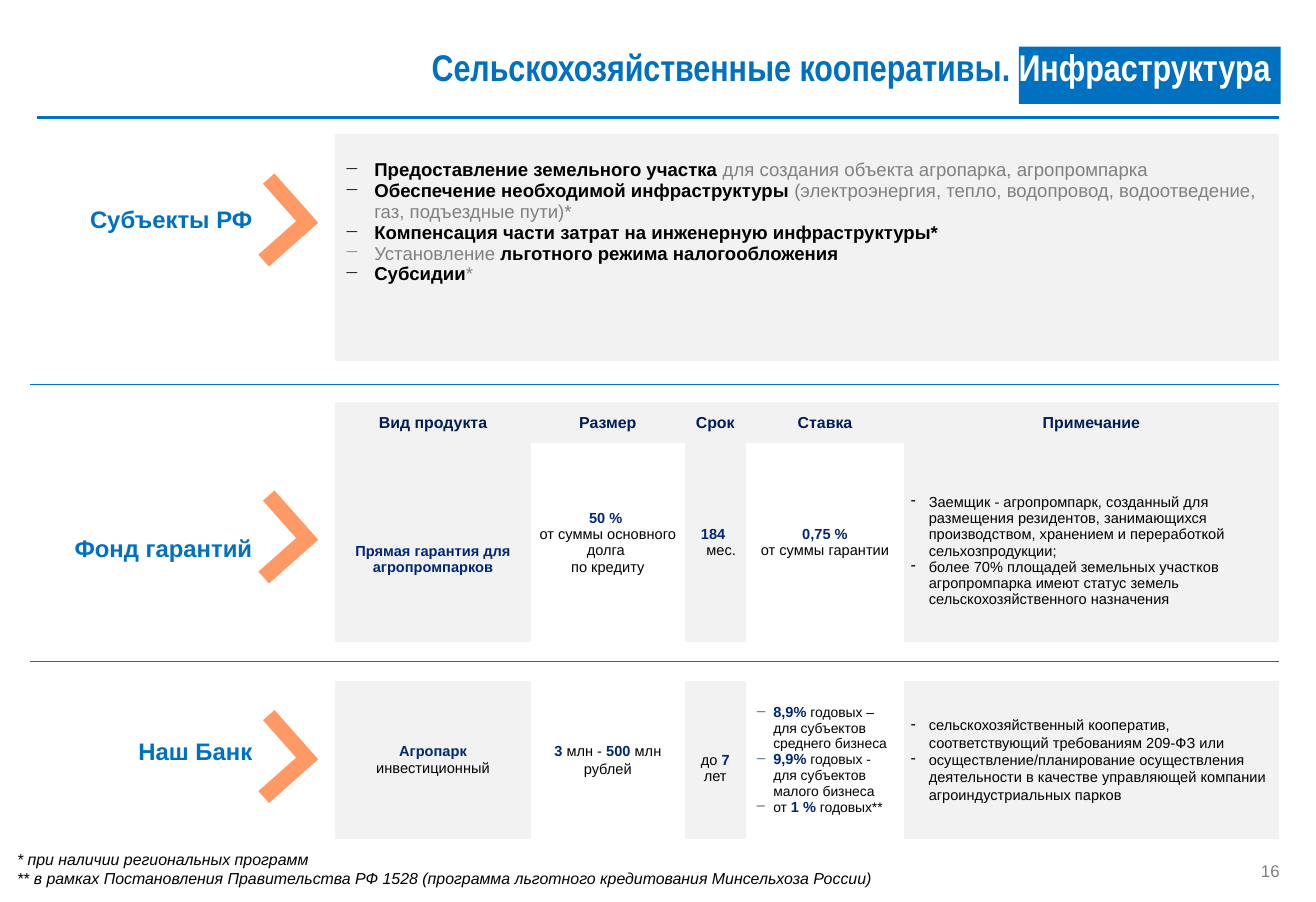
from lxml import etree
from pptx import Presentation
from pptx.dml.color import RGBColor
from pptx.enum.shapes import MSO_CONNECTOR, MSO_SHAPE
from pptx.enum.text import MSO_ANCHOR, MSO_AUTO_SIZE, PP_ALIGN
from pptx.oxml.ns import qn
from pptx.util import Pt

BLUE = RGBColor(0x00, 0x70, 0xC0)
NAVY = RGBColor(0x00, 0x27, 0x76)
HEADER_NAVY = RGBColor(0x00, 0x1D, 0x58)
ORANGE = RGBColor(0xFF, 0x99, 0x66)
PALE = RGBColor(0xF2, 0xF2, 0xF2)
GRAY = RGBColor(0x80, 0x80, 0x80)
BLACK = RGBColor(0, 0, 0)
WHITE = RGBColor(255, 255, 255)

PLAIN_TABLE_STYLE = "{2D5ABB26-0587-4C30-8999-92F81FD0307C}"
KEY = dict(color=NAVY, bold=True)
STRONG = dict(bold=True)
MUTED = dict(color=GRAY)
RATE = dict(color=NAVY, bold=True, size=11)

COLUMN_WIDTHS = (147.6, 115.9, 46.1, 119.5, 282.2)
ROW_HEIGHTS = (171.4, 31, 31, 150.5, 28.8, 119.5)
HEADERS = ("Вид продукта", "Размер", "Срок", "Ставка", "Примечание")
REGION_MEASURES = [
    [("Предоставление земельного участка ", STRONG),
     ("для создания объекта агропарка, агропромпарка", MUTED)],
    [("Обеспечение необходимой инфраструктуры ", STRONG),
     ("(электроэнергия, тепло, водопровод, водоотведение, газ, подъездные пути)*", MUTED)],
    [("Компенсация части затрат на инженерную инфраструктуры*", STRONG)],
    [("Установление ", MUTED), ("льготного режима налогообложения", STRONG)],
    [("Субсидии", STRONG), ("*", MUTED)],
]
NOTE = dict(align=PP_ALIGN.LEFT, bullet="-", indent=13.5)
TIGHT = dict(side=5, top=0, bottom=0)
# Each cell: paragraphs, text format, cell margins
GUARANTEE = (
    ([[("Прямая гарантия для агропромпарков", KEY)]], {}, dict(top=28.9)),
    ([[("50 % ", KEY)], ["от суммы основного долга "], ["по кредиту"]], {}, TIGHT),
    ([[("184 ", KEY)], ["мес."]], dict(last_left=9), {}),
    ([[("0,75 %", KEY)], ["от суммы гарантии"]], {}, {}),
    ([["Заемщик - агропромпарк, созданный для размещения резидентов, занимающихся "
       "производством, хранением и переработкой сельхозпродукции;"],
      ["более 70% площадей земельных участков агропромпарка имеют статус земель "
       "сельскохозяйственного назначения"]], NOTE, dict(side=5, top=12.65, bottom=0)),
)
LOAN = (
    ([[("Агропарк", KEY)], ["инвестиционный"]], {}, {}),
    ([[("3 ", KEY), "млн - ", ("500 ", KEY), "млн рублей"]], dict(spacing=1.07), TIGHT),
    ([["до", (" 7 ", KEY), "лет"]], {}, dict(top=16.25)),
    ([[("8,9%", RATE), " годовых – для субъектов среднего бизнеса"],
      [("9,9%", RATE), " годовых - для субъектов малого бизнеса"],
      ["от ", ("1 %", RATE), " годовых**"]], dict(NOTE, bullet="−", size=10.5), {}),
    ([["сельскохозяйственный кооператив, соответствующий требованиям 209-ФЗ или"],
      ["осуществление/планирование осуществления деятельности в качестве "
       "управляющей компании агроиндустриальных парков"]], dict(NOTE, spacing=1.07), TIGHT),
)


def write_text(frame, paragraphs, size=11, color=BLACK, bold=False, italic=False,
               font="Arial", align=PP_ALIGN.LEFT, spacing=None, bullet=None,
               indent=0, last_left=0):
    """Fill a frame; a span is a string or a (string, format overrides) pair."""
    for index, spans in enumerate(paragraphs):
        para = frame.paragraphs[0] if index == 0 else frame.add_paragraph()
        properties = para._p.get_or_add_pPr()
        if bullet:
            properties.set("marL", str(Pt(indent)))
            properties.set("indent", str(-Pt(indent)))
            etree.SubElement(properties, qn("a:buChar")).set("char", bullet)
        elif last_left and index == len(paragraphs) - 1:
            properties.set("marL", str(Pt(last_left)))
        para.alignment = align
        if spacing:
            para.line_spacing = spacing
        for span in spans:
            text, changes = (span, {}) if isinstance(span, str) else span
            run = para.add_run()
            run.text = text
            run.font.name = font
            run.font.size = Pt(changes.get("size", size))
            run.font.bold = changes.get("bold", bold)
            run.font.italic = italic
            run.font.color.rgb = changes.get("color", color)


def add_text_box(slide, box, paragraphs, anchor=MSO_ANCHOR.TOP, inset=None, **text_format):
    frame = slide.shapes.add_textbox(*map(Pt, box)).text_frame
    frame.word_wrap = True
    frame.vertical_anchor = anchor
    if inset is not None:
        frame.margin_left = frame.margin_right = Pt(inset)
        frame.margin_top = frame.margin_bottom = Pt(inset)
    write_text(frame, paragraphs, **text_format)


def add_filled_shape(slide, kind, box, color):
    shape = slide.shapes.add_shape(kind, *map(Pt, box))
    shape.shadow.inherit = False
    shape.fill.solid()
    shape.fill.fore_color.rgb = color
    shape.line.fill.background()
    return shape


def add_rule(slide, left, top, width, weight):
    rule = slide.shapes.add_connector(
        MSO_CONNECTOR.STRAIGHT, Pt(left), Pt(top), Pt(left + width), Pt(top))
    rule.line.color.rgb = BLUE
    rule.line.width = Pt(weight)
    etree.SubElement(rule._element.spPr, qn("a:effectLst"))


def add_heading(slide, left, top, width, height):
    title = slide.shapes.title
    title.left, title.top, title.width, title.height = map(Pt, (left, top, width, height))
    frame = title.text_frame
    frame.auto_size = MSO_AUTO_SIZE.NONE
    frame.word_wrap = True
    frame.vertical_anchor = MSO_ANCHOR.MIDDLE
    write_text(frame, [["Сельскохозяйственные кооперативы. ",
                        ("Инфраструктура", dict(color=WHITE))]],
               size=28, color=BLUE, bold=True, font="Arial Narrow")
    highlight = add_filled_shape(slide, MSO_SHAPE.RECTANGLE,
                                 (left + 450, top + 12.2, 197.3, 43.2), BLUE)
    title._element.addprevious(highlight._element)
    add_rule(slide, 28.1, top + 65.6, 936, 2.25)


def add_provider(slide, name, box, chevron_top):
    """Place a provider's name and the chevron that points to its measures."""
    left, top, width, height = box
    add_text_box(slide, box, [[name]], anchor=MSO_ANCHOR.MIDDLE, size=18,
                 color=BLUE, bold=True, align=PP_ALIGN.RIGHT)
    chevron = add_filled_shape(slide, MSO_SHAPE.CORNER,
                               (left + width - 17.3, chevron_top, 49.7, 49.7), ORANGE)
    chevron.adjustments[0] = 0.233
    chevron.adjustments[1] = 0.241
    chevron.rotation = 228.4


def fill_cell(cell, paragraphs, text_format, side=7.2, top=3.6, bottom=3.6,
              anchor=MSO_ANCHOR.MIDDLE):
    cell.margin_left = cell.margin_right = Pt(side)
    cell.margin_top, cell.margin_bottom = Pt(top), Pt(bottom)
    cell.vertical_anchor = anchor
    write_text(cell.text_frame, paragraphs, **{"align": PP_ALIGN.CENTER, **text_format})


def add_measures_table(slide, left, top):
    frame = slide.shapes.add_table(
        len(ROW_HEIGHTS), len(COLUMN_WIDTHS), Pt(left), Pt(top),
        Pt(sum(COLUMN_WIDTHS)), Pt(sum(ROW_HEIGHTS)))
    table = frame.table
    table.first_row = table.horz_banding = False
    table._tbl.tblPr.find(qn("a:tableStyleId")).text = PLAIN_TABLE_STYLE
    for column, width in zip(table.columns, COLUMN_WIDTHS):
        column.width = Pt(width)
    for row_index, height in enumerate(ROW_HEIGHTS):
        table.rows[row_index].height = Pt(height)
        for column_index in range(len(COLUMN_WIDTHS)):
            fill = table.cell(row_index, column_index).fill
            if row_index in (0, 2) or (row_index in (3, 5) and column_index % 2 == 0):
                fill.solid()
                fill.fore_color.rgb = PALE
            else:
                fill.background()

    table.cell(0, 0).merge(table.cell(0, 4))
    fill_cell(table.cell(0, 0), REGION_MEASURES,
              dict(size=14, align=PP_ALIGN.LEFT, bullet="−", indent=22.3),
              top=19.7, anchor=MSO_ANCHOR.TOP)
    for column_index, header in enumerate(HEADERS):
        fill_cell(table.cell(2, column_index), [[header]],
                  dict(size=12, color=HEADER_NAVY, bold=True))
    for row_index, product in ((3, GUARANTEE), (5, LOAN)):
        for column_index, (paragraphs, text_format, margins) in enumerate(product):
            fill_cell(table.cell(row_index, column_index), paragraphs, text_format, **margins)


def add_footer(slide, left, top):
    add_text_box(slide, (left, top, 679, 36),
                 [["* при наличии региональных программ"],
                  ["** в рамках Постановления Правительства РФ 1528 "
                   "(программа льготного кредитования Минсельхоза России)"]],
                 size=12, italic=True)
    add_text_box(slide, (left + 928.8, top + 13, 30.2, 14.4), [["16"]], inset=0,
                 size=12.7, color=GRAY, align=PP_ALIGN.RIGHT, spacing=Pt(14.3))


def main():
    deck = Presentation()
    deck.slide_width, deck.slide_height = Pt(992.16), Pt(680.4)
    slide = deck.slides.add_slide(deck.slide_layouts[5])
    add_heading(slide, 318.2, 23, 654.5, 54.7)
    add_provider(slide, "Субъекты РФ", (0, 121.7, 197.3, 86.4), 141.1)
    add_provider(slide, "Фонд гарантий", (0, 345.6, 197.3, 135.4), 380.2)
    add_provider(slide, "Наш Банк", (0, 499, 197.3, 135.4), 545.8)
    for rule_top in (290.2, 499):
        add_rule(slide, 22.6, rule_top, 941.8, 0.75)
    add_measures_table(slide, 252.7, 100.8)
    add_footer(slide, 5.8, 637.2)
    deck.save("out.pptx")


if __name__ == "__main__":
    main()
